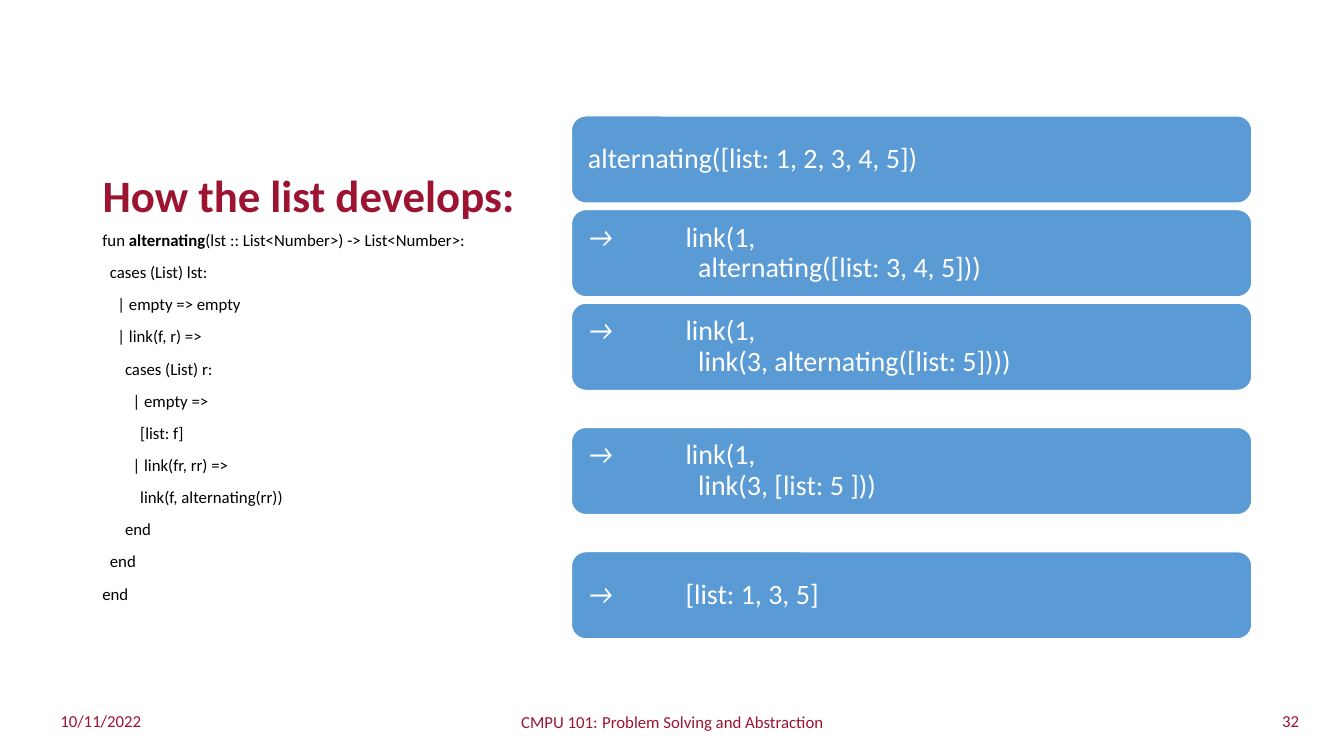
from lxml import etree
from pptx import Presentation
from pptx.dml import color as col
from pptx.enum import shapes as shp, text as txt
from pptx.oxml import ns
from pptx.util import Cm, Pt

# Content
TITLE = "How the list develops:"
CODE = [
    ["fun ", "alternating", "(lst :: List<Number>) -> List<Number>:"],
    ["  cases (List) lst:"],
    ["    | empty => empty"],
    ["    | link(f, r) =>"],
    ["      cases (List) r:"],
    ["        | empty =>"],
    ["          [list: f]"],
    ["        | link(fr, rr) =>"],
    ["          link(f, alternating(rr))"],
    ["      end"],
    ["  end"],
    ["end"],
]
STEPS = [
    ["alternating([list: 1, 2, 3, 4, 5])"],
    ["→", "\tlink(1, ", "\t  alternating([list: 3, 4, 5]))"],
    ["→", "\tlink(1, ", "\t  link(3, alternating([list: 5])))"],
    ["→", "\tlink(1, ", "\t  link(3, [list: 5 ]))"],
    ["→", "\t[list: 1, 3, 5]"],
]
LEFT, MID, RIGHT = txt.PP_ALIGN.LEFT, txt.PP_ALIGN.CENTER, txt.PP_ALIGN.RIGHT
FOOT = [  # text, left, width, alignment
    ("10/11/2022", 1.27, 9.55, LEFT),
    ("CMPU 101: Problem Solving and Abstraction", 11.23, 11.43, MID),
    ("32", 23.44, 9.55, RIGHT),
]
COLORS = {"red": "9C1431", "blue": "5B9BD5", "white": "FFFFFF", "black": "000000"}

# Step boxes: a close gap for the first three, a wide one after
BOX_X, BOX_Y, BOX_W, BOX_H = 14.4, 2.92, 17.15, 2.2
GAPS = [0.16, 0.16, 0.93, 0.93, 0]
TAB = 2.46


def rgb(name):
    return col.RGBColor.from_string(COLORS[name])


def style(run, size, color, bold=False, italic=False):
    font = run.font
    font.name, font.size = "Calibri", Pt(size)
    font.bold, font.italic = bold, italic
    font.color.rgb = rgb(color)


def add_run(para, words, *look, **more):
    run = para.add_run()
    run.text = words
    style(run, *look, **more)


def add_box(x, y, w, h, anchor):
    frame = slide.shapes.add_textbox(Cm(x), Cm(y), Cm(w), Cm(h)).text_frame
    frame.word_wrap = True
    frame.vertical_anchor = anchor
    return frame


deck = Presentation()
deck.slide_width, deck.slide_height = Cm(33.87), Cm(19.05)
slide = deck.slides.add_slide(deck.slide_layouts[5])

# Title
title = slide.shapes.title
title.left, title.top, title.width, title.height = Cm(2.33), Cm(1.27), Cm(10.92), Cm(4.45)
frame = title.text_frame
frame.text = TITLE
frame.word_wrap = True
frame.auto_size = txt.MSO_AUTO_SIZE.NONE
frame.vertical_anchor = txt.MSO_ANCHOR.BOTTOM
para = frame.paragraphs[0]
para.alignment, para.line_spacing = LEFT, 0.9
style(para.runs[0], 32, "red", bold=True)

# Code
frame = add_box(2.33, 5.72, 10.92, 10.6, txt.MSO_ANCHOR.TOP)
for row, parts in enumerate(CODE):
    para = frame.add_paragraph() if row else frame.paragraphs[0]
    para.line_spacing = 0.9
    para.space_before = Pt(10 if row else 0)
    for part in parts:
        add_run(para, part, 12, "black", bold=part == "alternating")

# Steps
y = BOX_Y
for parts, gap in zip(STEPS, GAPS):
    box = slide.shapes.add_shape(
        shp.MSO_SHAPE.ROUNDED_RECTANGLE, Cm(BOX_X), Cm(y), Cm(BOX_W), Cm(BOX_H))
    y += BOX_H + gap
    box.shadow.inherit = False
    box.fill.solid()
    box.fill.fore_color.rgb = rgb("blue")
    box.line.color.rgb = rgb("white")
    box.line.width = Pt(1)
    frame = box.text_frame
    frame.word_wrap = True
    frame.vertical_anchor = txt.MSO_ANCHOR.MIDDLE
    frame.margin_left = frame.margin_right = Cm(0.31)
    para = frame.paragraphs[0]
    para.alignment, para.line_spacing = LEFT, 0.9
    tabs = etree.SubElement(para._p.get_or_add_pPr(), ns.qn("a:tabLst"))
    etree.SubElement(tabs, ns.qn("a:tab"), pos=str(Cm(TAB)), algn="l")
    for i, part in enumerate(parts):
        if i > 1:
            para.add_line_break()
        add_run(para, part, 20, "white", italic=part == "→")

# Footer
for words, x, w, align in FOOT:
    frame = add_box(x, 17.65, w, 1.02, txt.MSO_ANCHOR.MIDDLE)
    para = frame.paragraphs[0]
    para.alignment, para.space_after = align, Pt(6)
    head, colon, tail = words.partition(": ")
    add_run(para, head + colon.strip(), 12, "red")
    if tail:
        add_run(para, " ", 14, "red")
        add_run(para, tail, 12, "red")

deck.save("out.pptx")
